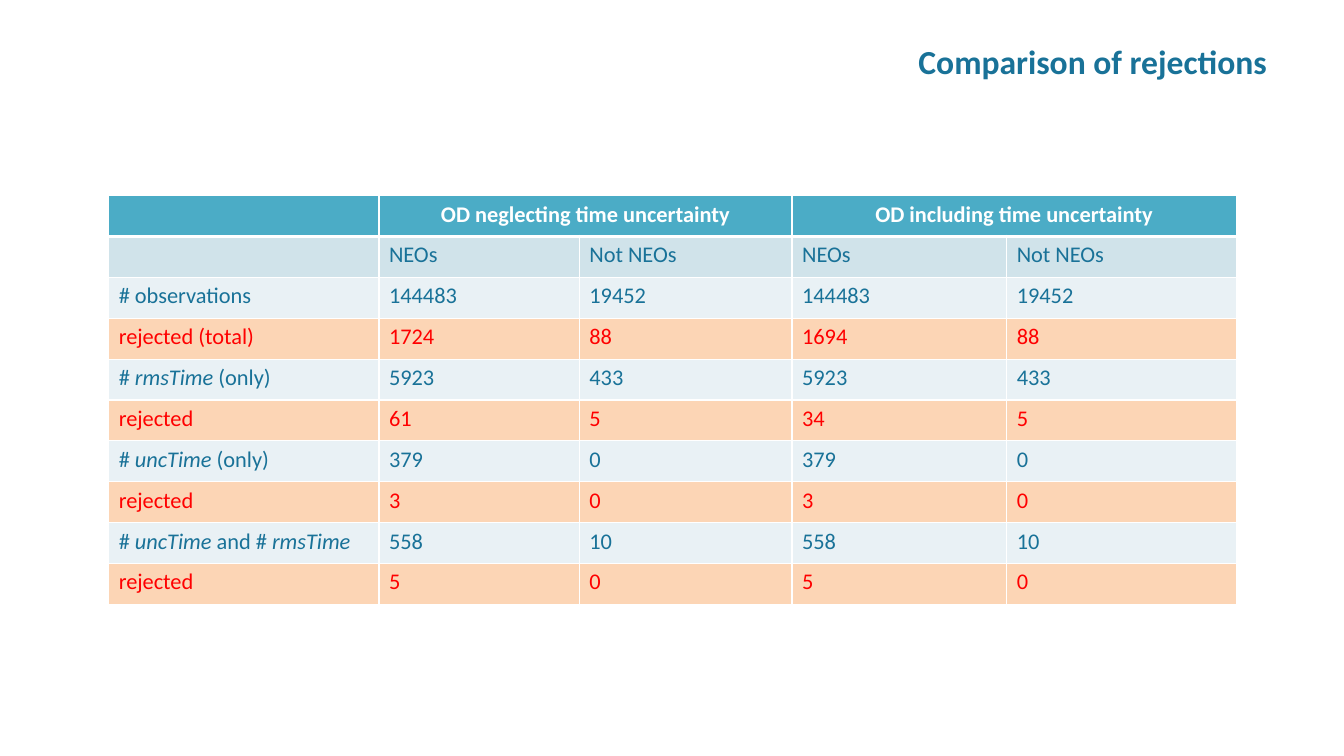
"""Build a slide with a table comparing rejected observations."""
from lxml.etree import SubElement
from pptx import Presentation
from pptx.dml.color import RGBColor
from pptx.enum.text import MSO_ANCHOR, PP_ALIGN
from pptx.oxml.ns import qn
from pptx.util import Cm, Pt

WHITE, BLUE, RED = "FFFFFF", "197298", "FF0000"
HEAD, SUB, PALE, PEACH = "4BACC6", "D0E3EA", "E9F1F5", "FCD5B5"
WIDTHS = [6.81, 5.05, 5.36, 5.41, 5.79]
ROWS = [
    ["", "OD neglecting time uncertainty", "", "OD including time uncertainty", ""],
    ["", "NEOs", "Not NEOs", "NEOs", "Not NEOs"],
    ["# observations", "144483", "19452", "144483", "19452"],
    ["rejected (total)", "1724", "88", "1694", "88"],
    ["# *rmsTime* (only)", "5923", "433", "5923", "433"],
    ["rejected", "61", "5", "34", "5"],
    ["# *uncTime* (only)", "379", "0", "379", "0"],
    ["rejected", "3", "0", "3", "0"],
    ["# *uncTime* and # *rmsTime*", "558", "10", "558", "10"],
    ["rejected", "5", "0", "5", "0"],
]


def color(code):
    return RGBColor.from_string(code)


class Deck:
    def __init__(self, font):
        self.font = font
        self.show = Presentation()
        self.show.slide_width, self.show.slide_height = Cm(33.87), Cm(19.05)
        self.slide = self.show.slides.add_slide(self.show.slide_layouts[6])

    def label(self, frame, text, size, ink, bold=False, align=PP_ALIGN.LEFT):
        para = frame.paragraphs[0]
        para.alignment = align
        para.font.size = Pt(size)
        for i, part in enumerate(text.split("*")):
            if part:
                run = para.add_run()
                run.text = part
                font = run.font
                font.name, font.size = self.font, Pt(size)
                font.bold, font.italic = bold, i % 2 == 1
                font.color.rgb = color(ink)

    def title(self, text, left, top, width, height):
        box = self.slide.shapes.add_textbox(Cm(left), Cm(top), Cm(width), Cm(height))
        frame = box.text_frame
        frame.word_wrap = True
        frame.vertical_anchor = MSO_ANCHOR.MIDDLE
        self.label(frame, text, 24, BLUE, True, PP_ALIGN.RIGHT)

    def edge(self, cell, side, width):
        props = cell._tc.get_or_add_tcPr()
        line = SubElement(props, qn(f"a:ln{side}"), w=str(Pt(width)))
        fill = SubElement(line, qn("a:solidFill"))
        SubElement(fill, qn("a:srgbClr"), val=WHITE)

    def table(self, rows, left, top, widths, height):
        grid = self.slide.shapes.add_table(
            len(rows), len(widths), Cm(left), Cm(top),
            Cm(sum(widths)), Cm(height * len(rows))).table
        grid.first_row = grid.horz_banding = False
        for col, width in zip(grid.columns, widths):
            col.width = Cm(width)
        for r, row in enumerate(rows):
            grid.rows[r].height = Cm(height)
            top_row, lost = r == 0, row[0].startswith("rejected")
            back = HEAD if top_row else SUB if r == 1 else PEACH if lost else PALE
            ink = WHITE if top_row else RED if lost else BLUE
            align = PP_ALIGN.CENTER if top_row else PP_ALIGN.LEFT
            for c, text in enumerate(row):
                cell = grid.cell(r, c)
                for side in "LRTB":
                    thick = (r, side) in [(0, "B"), (1, "T")]
                    self.edge(cell, side, 3 if thick else 1)
                cell.fill.solid()
                cell.fill.fore_color.rgb = color(back)
                self.label(cell.text_frame, text, 16, ink, top_row, align)
        for c in (1, 3):
            grid.cell(0, c).merge(grid.cell(0, c + 1))

    def save(self):
        self.show.save("out.pptx")


def main():
    deck = Deck("Calibri")
    deck.title("Comparison of rejections", 8.94, 0.76, 23.24, 1.55)
    deck.table(ROWS, 2.74, 4.93, WIDTHS, 1.03)
    deck.save()


if __name__ == "__main__":
    main()
